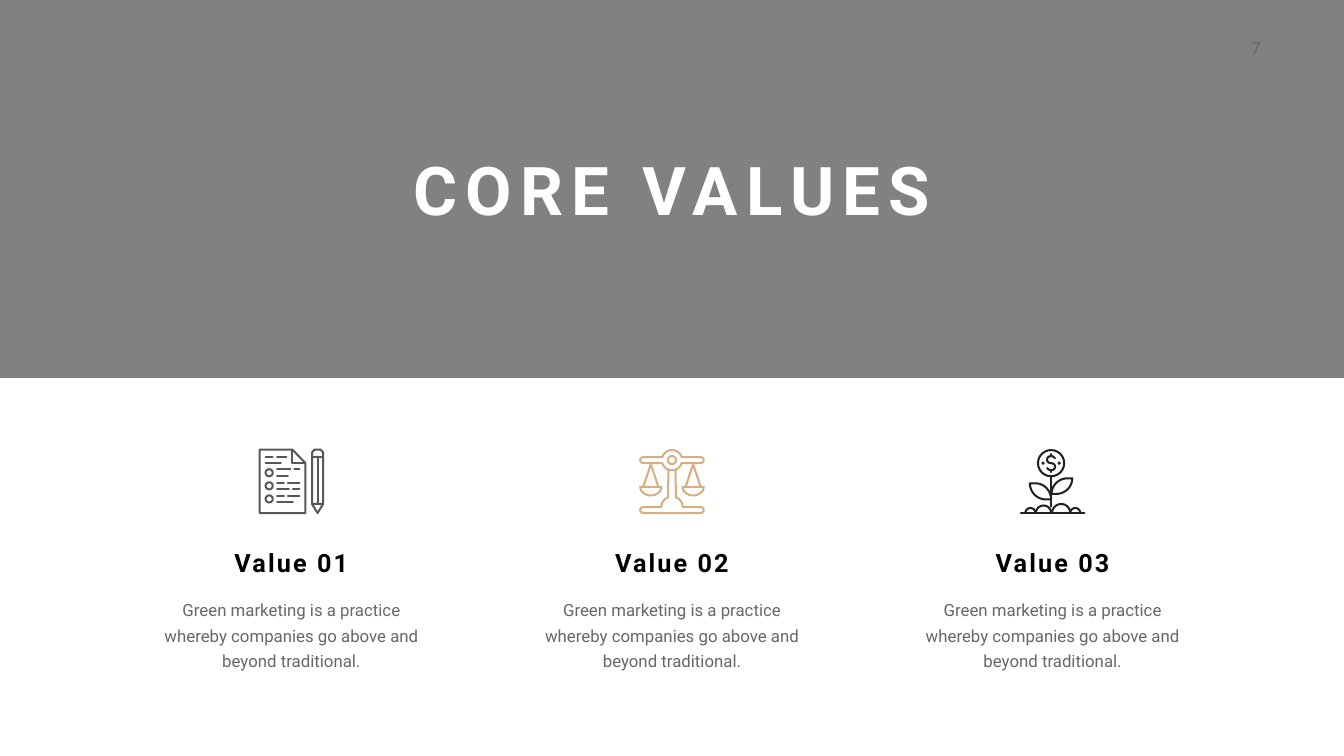
from math import cos, radians, sin

from lxml.etree import SubElement
from pptx import Presentation
from pptx.dml.color import RGBColor
from pptx.enum.shapes import MSO_SHAPE
from pptx.enum.text import MSO_ANCHOR, PP_ALIGN
from pptx.oxml.ns import qn
from pptx.util import Inches, Pt

COLORS = {
    "slate": "56575A",
    "gold": "D6AE81",
    "ink": "212121",
    "heading": "000000",
    "body": "676767",
    "title": "FFFFFF",
}
CENTER_X, COLUMN_GAP, ICON_Y = 13.33, 7.55, 9.55


def arc(cx, cy, rx, ry, start=0, end=360):
    """Points along an ellipse, angles in degrees, clockwise from the right."""
    angles = [radians(start + (end - start) * step / 24) for step in range(25)]
    return [(cx + rx * cos(a), cy + ry * sin(a)) for a in angles]


def draw_icon(slide, center_x, strokes, color):
    """Draw strokes, given in inches from the icon's centre, as one outline."""
    paths = [[(Inches(center_x + x), Inches(ICON_Y + y)) for x, y in stroke]
             for stroke in strokes]
    builder = slide.shapes.build_freeform(*paths[0][0], scale=1.0)
    for path_points in paths:
        builder.move_to(*path_points[0])
        builder.add_line_segments(path_points[1:], close=False)
    icon = builder.convert_to_shape()
    icon.shadow.inherit = False
    icon.fill.background()
    icon.line.color.rgb = RGBColor.from_string(COLORS[color])
    icon.line.width = Inches(0.04)
    icon.line._ln.set("cap", "rnd")


presentation = Presentation()
presentation.slide_width = Inches(26.66)
presentation.slide_height = Inches(15)
slide = presentation.slides.add_slide(presentation.slide_layouts[6])

# Translucent header band
band = slide.shapes.add_shape(MSO_SHAPE.RECTANGLE, 0, 0, Inches(26.66), Inches(7.5))
band.shadow.inherit = False
band.line.fill.background()
band.fill.solid()
band.fill.fore_color.rgb = RGBColor.from_string(COLORS["slate"])
band_color = band._element.spPr.find(qn("a:solidFill"))[0]
SubElement(band_color, qn("a:alpha")).set("val", "75000")

# Checklist and pencil
checklist = [
    [(-0.63, -0.63), (0.02, -0.63), (0.28, -0.36), (0.28, 0.63), (-0.63, 0.63),
     (-0.63, -0.63)],
    [(0.02, -0.63), (0.02, -0.36), (0.28, -0.36)],
    [(0.41, 0.45), (0.41, -0.57), (0.46, -0.63), (0.58, -0.63), (0.63, -0.57),
     (0.63, 0.45), (0.52, 0.63), (0.41, 0.45), (0.63, 0.45)],
    [(0.41, -0.49), (0.63, -0.49)],
    [(0.52, -0.49), (0.52, 0.45)],
]
checklist += [arc(-0.44, y, 0.07, 0.07) for y in (-0.17, 0.09, 0.35)]
written_lines = [
    (-0.49, [(-0.51, -0.37), (-0.28, -0.1)]),
    (-0.36, [(-0.51, -0.21)]),
    (-0.24, [(-0.28, -0.02), (0.06, 0.16)]),
    (-0.11, [(-0.28, -0.07)]),
    (0.03, [(-0.28, -0.15), (-0.07, 0.16)]),
    (0.16, [(-0.28, -0.05), (0.03, 0.16)]),
    (0.29, [(-0.28, -0.15), (-0.07, 0.16)]),
    (0.42, [(-0.28, 0.03)]),
]
for y, dashes in written_lines:
    checklist += [[(left, y), (right, y)] for left, right in dashes]

# Scales, mirrored about the post
scales = [
    arc(0, -0.42, 0.08, 0.08),
    arc(0, -0.42, 0.2, 0.2, 200, 340),
    arc(0, -0.42, 0.2, 0.2, 20, 160),
]
for side in (-1, 1):
    beam = ([(side * 0.19, -0.48)]
            + arc(side * 0.56, -0.42, side * 0.07, 0.06, -90, 90)
            + [(side * 0.19, -0.36)])
    cords = [(side * 0.27, 0.11), (side * 0.42, -0.34), (side * 0.57, 0.11)]
    pan = arc(side * 0.42, 0.11, 0.21, 0.17, 0, 180) + [(side * 0.42 + 0.21, 0.11)]
    base_and_post = ([(0, 0.63)]
                     + arc(side * 0.56, 0.57, side * 0.07, 0.06, 90, -90)
                     + arc(side * 0.02, 0.51, side * 0.19, 0.2, 0, -72)
                     + [(side * 0.07, -0.23)])
    scales += [beam, cords, pan, base_and_post]

# Coin plant
coin_x, coin_y = -0.03, -0.36
left_leaf = (arc(-0.34, 0.36, 0.31, 0.32, -90, 0)
             + arc(-0.13, 0.04, 0.32, 0.32, 90, 180) + [(-0.34, 0.04)])
right_leaf = (arc(0.3, 0.25, 0.32, 0.31, -90, -180)
              + arc(0.07, -0.06, 0.32, 0.31, 90, 0) + [(0.3, -0.06)])
coin_plant = [
    arc(coin_x, coin_y, 0.26, 0.26),
    arc(coin_x, coin_y - 0.07, 0.08, 0.07, -20, -270)
    + arc(coin_x, coin_y + 0.07, 0.08, 0.07, -90, 160),
    [(coin_x, -0.1), (coin_x, 0.5)],
    left_leaf,
    right_leaf,
    [(-0.63, 0.63), (0.63, 0.63)],
]
for side in (-1, 1):
    coin_plant.append([(coin_x, coin_y + side * 0.14), (coin_x, coin_y + side * 0.18)])
    coin_plant.append(arc(coin_x + side * 0.16, coin_y, 0.01, 0.01))
for mound_x, radius in [(-0.44, 0.1), (-0.18, 0.15), (0.17, 0.18), (0.45, 0.1)]:
    coin_plant.append(arc(mound_x, 0.63, radius, radius, 180, 360))

# Wording: text, left, top, width, height, size, color, bold, letter spacing, wrap
wording = [
    ("CORE VALUES", 7.92, 2.89, 10.82, 1.72, 96, "title", True, 12, False),
    ("7", 24.41, 0.6, 1, 0.7, 24, "body", False, 0, False),
]
summary = ("Green marketing is a practice whereby companies go above and "
           "beyond traditional.")
icons = [(checklist, "slate"), (scales, "gold"), (coin_plant, "ink")]
for column, (strokes, color) in enumerate(icons):
    column_x = CENTER_X + (column - 1) * COLUMN_GAP
    draw_icon(slide, column_x, strokes, color)
    wording += [
        (f"Value {column + 1:02}", column_x - 1.26, 10.8, 2.52, 0.71, 36, "heading",
         True, 3, False),
        (summary, column_x - 2.87, 11.73, 5.74, 1.61, 24, "body", False, 0, True),
    ]

for text, left, top, width, height, size, color, bold, spacing, wrap in wording:
    box = slide.shapes.add_textbox(Inches(left), Inches(top), Inches(width), Inches(height))
    frame = box.text_frame
    frame.word_wrap = wrap
    frame.vertical_anchor = MSO_ANCHOR.TOP if wrap else MSO_ANCHOR.MIDDLE
    paragraph = frame.paragraphs[0]
    paragraph.text = text
    paragraph.alignment = PP_ALIGN.CENTER
    paragraph.font.name = "Roboto"
    paragraph.font.size = Pt(size)
    paragraph.font.bold = bold
    paragraph.font.color.rgb = RGBColor.from_string(COLORS[color])
    if wrap:
        paragraph.line_spacing = Pt(37)
        paragraph.space_before = Pt(5)
    if spacing:
        paragraph.runs[0].font._element.set("spc", str(spacing * 100))

presentation.save("out.pptx")
